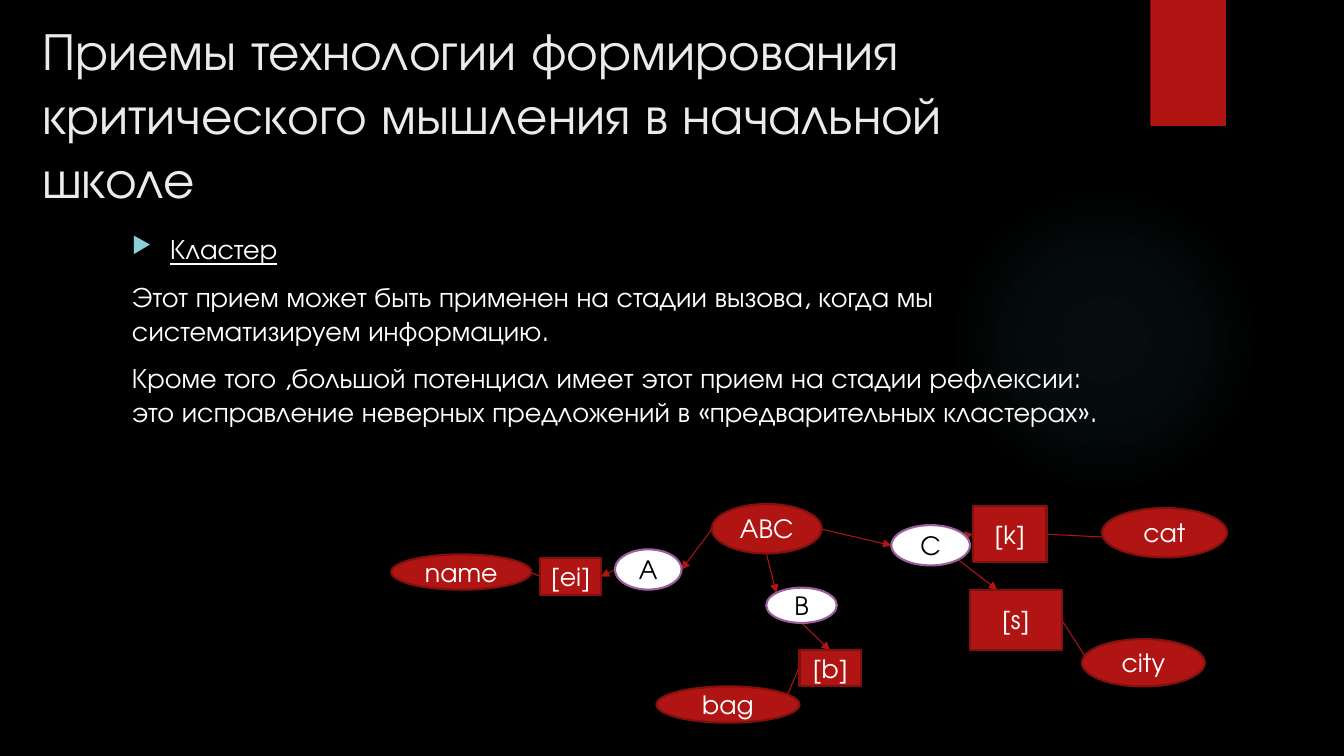
"""Builds the slide about the cluster technique of critical thinking."""
from lxml.etree import SubElement
from pptx import Presentation
from pptx.dml.color import RGBColor
from pptx.enum.shapes import MSO_CONNECTOR, MSO_SHAPE
from pptx.enum.text import MSO_ANCHOR, PP_ALIGN
from pptx.oxml import parse_xml
from pptx.oxml.ns import nsdecls, qn
from pptx.util import Pt

PX = 9144
THEME = {
    "font": "TeX Gyre Adventor", "title_size": 37.8, "body_size": 20, "node_size": 18,
    "bg": "000000", "title": "EBEBEB", "text": "FFFFFF", "dark": "000000", "bullet": "8AD0D6",
    "red": "B01513", "red_edge": "82100E", "white": "FFFFFF", "purple": "9E5E9B", "glow": "50B9C1",
}


def add_node(kind, box, fill, edge=None):
    sp = s.shapes.add_shape(kind, *[v * PX for v in box])
    sp.shadow.inherit = False
    sp.fill.solid()
    sp.fill.fore_color.rgb = RGBColor.from_string(THEME[fill])
    if edge:
        sp.line.color.rgb = RGBColor.from_string(THEME[edge])
        sp.line.width = Pt(1.5)
    else:
        sp.line.fill.background()
    return sp


def add_run(p, text, size, color, underline=False):
    r = p.add_run()
    r.text = text
    formats = {"name": THEME["font"], "size": Pt(THEME[size]), "underline": underline}
    for name, value in formats.items():
        setattr(r.font, name, value)
    r.font.color.rgb = RGBColor.from_string(THEME[color])


prs = Presentation()
prs.slide_width, prs.slide_height = 1333 * PX, 750 * PX
s = prs.slides.add_slide(prs.slide_layouts[6])
s.background.fill.solid()
s.background.fill.fore_color.rgb = RGBColor.from_string(THEME["bg"])

glow = add_node(MSO_SHAPE.OVAL, (941, 183, 308, 308), "glow")
stops = "".join(
    f'<a:gs pos="{pos * 1000}"><a:srgbClr val="{THEME["glow"]}"><a:alpha val="{alpha * 1000}"/></a:srgbClr></a:gs>'
    for pos, alpha in [(0, 7), (36, 6), (69, 0), (100, 0)])
spPr = glow.element.spPr
spPr.replace(spPr.find(qn("a:solidFill")), parse_xml(
    f'<a:gradFill {nsdecls("a")}><a:gsLst>{stops}</a:gsLst><a:path path="circle">'
    '<a:fillToRect l="50000" t="50000" r="50000" b="50000"/></a:path></a:gradFill>'))
add_node(MSO_SHAPE.RECTANGLE, (1141, 0, 75, 125), "red")

title = s.shapes.add_textbox(32 * PX, 13 * PX, 1067 * PX, 189 * PX)
title.text_frame.word_wrap = True
add_run(title.text_frame.paragraphs[0],
        "Приемы технологии формирования критического мышления в начальной школе",
        "title_size", "title")

body = s.shapes.add_textbox(121 * PX, 225 * PX, 978 * PX, 459 * PX)
tf = body.text_frame
tf.word_wrap = True
p = tf.paragraphs[0]
pPr = p._p.get_or_add_pPr()
pPr.set("marL", str(38 * PX))
pPr.set("indent", str(-38 * PX))
SubElement(SubElement(pPr, qn("a:buClr")), qn("a:srgbClr"), val=THEME["bullet"])
SubElement(pPr, qn("a:buSzPct"), val="80000")
SubElement(pPr, qn("a:buChar"), char="▶")
add_run(p, "Кластер", "body_size", "text", True)
for text in [
    "Этот прием может быть применен на стадии вызова, когда мы систематизируем информацию.",
    "Кроме того ,большой потенциал имеет этот прием на стадии рефлексии: "
    "это исправление неверных предложений в «предварительных кластерах».",
]:
    p = tf.add_paragraph()
    p.space_before = Pt(10)
    add_run(p, text, "body_size", "text")

LINKS = [
    (706, 525, 676, 565, True), (760, 549, 770, 588, True), (815, 525, 884, 541, True),
    (610, 565, 596, 572, True), (536, 572, 527, 568, False),
    (795, 618, 823, 645, True), (793, 661, 772, 711, False),
    (938, 534, 965, 530, True), (1038, 530, 1120, 534, False),
    (950, 555, 989, 585, True), (1053, 615, 1091, 674, False),
]
for *ends, arrow in LINKS:
    link = s.shapes.add_connector(MSO_CONNECTOR.STRAIGHT, *[v * PX for v in ends])
    link.line.color.rgb = RGBColor.from_string(THEME["red"])
    link.line.width = Pt(0.75)
    if arrow:
        SubElement(link.line._get_or_add_ln(), qn("a:tailEnd"), type="triangle")
    SubElement(link._element.spPr, qn("a:effectLst"))

STYLES = {
    "word": (MSO_SHAPE.OVAL, "red", "red_edge", "text"),
    "sound": (MSO_SHAPE.RECTANGLE, "red", "red_edge", "text"),
    "letter": (MSO_SHAPE.OVAL, "white", "purple", "dark"),
}
NODES = [
    ("ABC", "word", (706, 500, 109, 49)),
    ("A", "letter", (610, 545, 66, 40)),
    ("B", "letter", (760, 583, 70, 35)),
    ("C", "letter", (884, 521, 78, 40)),
    ("[ei]", "sound", (536, 554, 60, 36)),
    ("[b]", "sound", (793, 645, 61, 36)),
    ("[k]", "sound", (965, 502, 73, 56)),
    ("[s]", "sound", (962, 585, 91, 60)),
    ("name", "word", (388, 550, 139, 35)),
    ("bag", "word", (651, 681, 142, 36)),
    ("cat", "word", (1093, 504, 124, 49)),
    ("city", "word", (1073, 634, 122, 47)),
]
for text, style, box in NODES:
    kind, fill, edge, color = STYLES[style]
    tf = add_node(kind, box, fill, edge).text_frame
    formats = {"word_wrap": False, "vertical_anchor": MSO_ANCHOR.MIDDLE}
    for name, value in formats.items():
        setattr(tf, name, value)
    p = tf.paragraphs[0]
    p.alignment = PP_ALIGN.CENTER
    add_run(p, text, "node_size", color)

prs.save("out.pptx")
